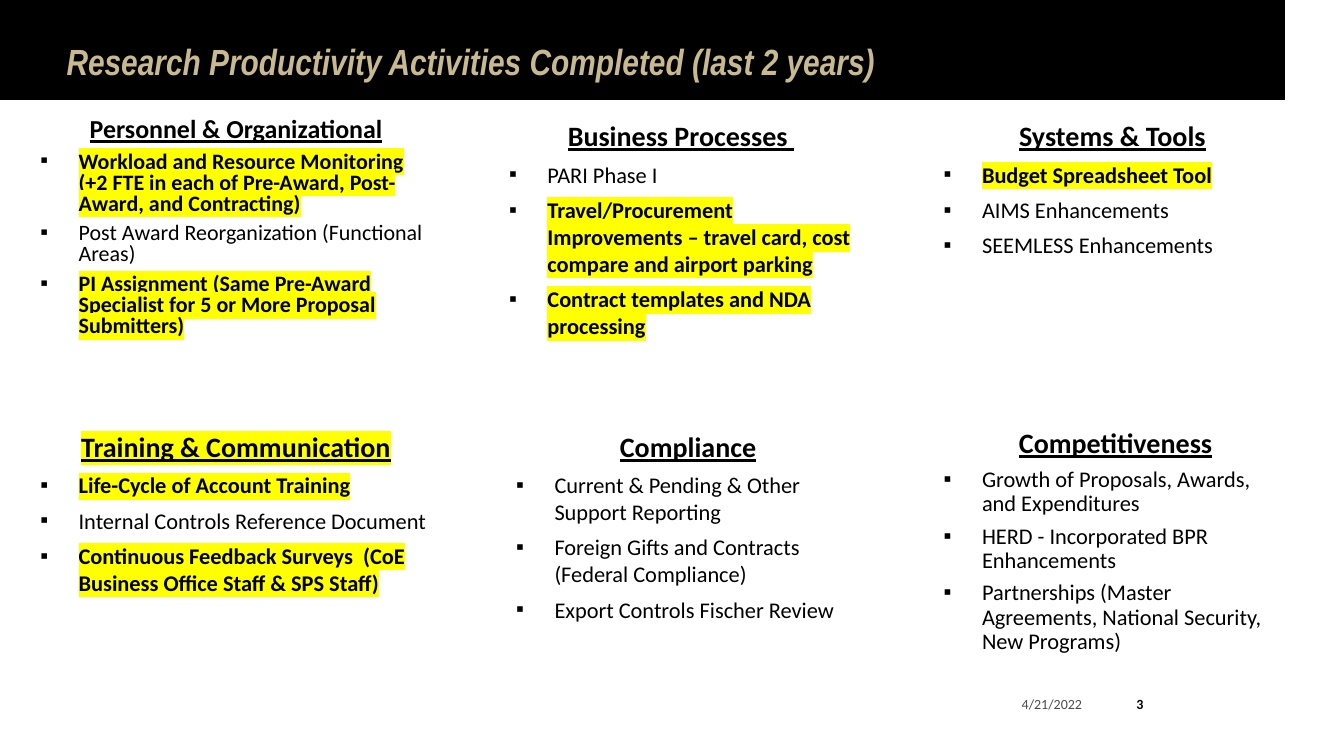
from lxml import etree
from pptx import Presentation
from pptx.dml.color import RGBColor as RGB
from pptx.enum.shapes import MSO_SHAPE as SHAPE
from pptx.enum.text import MSO_ANCHOR as ANCHOR, MSO_AUTO_SIZE as FIT, PP_ALIGN as ALIGN
from pptx.oxml.ns import qn
from pptx.util import Inches, Pt

COLORS = {"bar": "000000", "panel": "FFFFFF", "title": "C9B991",
          "text": "000000", "date": "4C4C4C", "mark": "FFFF00"}

TITLE = "Research Productivity Activities Completed (last 2 years)"
TOP, BOTTOM = 1.18, 4.26

PANELS = [
    dict(box=(0.36, TOP, 3.91, 2.76), heading="Personnel & Organizational",
         sizes=(18.5, 15.7), spacing=0.8, items=[
             ("Workload and Resource Monitoring (+2 FTE in each of Pre-Award, "
              "Post-Award, and Contracting)", True),
             ("Post Award Reorganization (Functional Areas)", False),
             ("PI Assignment (Same Pre-Award Specialist for 5 or More "
              "Proposal Submitters)", True)]),
    dict(box=(5.01, TOP, 3.44, 2.57), heading="Business Processes ", items=[
        ("PARI Phase I", False),
        ("Travel/Procurement Improvements – travel card, cost compare and "
         "airport parking", True),
        ("Contract templates and NDA processing", True)]),
    dict(box=(9.32, TOP, 3.44, 2.57), heading="Systems & Tools", tail=" ", items=[
        ("Budget Spreadsheet Tool", True),
        ("AIMS Enhancements", False),
        ("SEEMLESS Enhancements", False)]),
    dict(box=(0.36, BOTTOM, 3.91, 2.49), heading="Training & Communication",
         marked=True, items=[
             ("Life-Cycle of Account Training", True),
             ("Internal Controls Reference Document", False),
             ("Continuous Feedback Surveys  (CoE Business Office Staff & "
              "SPS Staff)", True)]),
    dict(box=(5.08, BOTTOM, 3.44, 2.86), heading="Compliance", items=[
        ("Current & Pending & Other Support Reporting", False),
        ("Foreign Gifts and Contracts (Federal Compliance)", False),
        ("Export Controls Fischer Review", False)]),
    dict(box=(9.32, BOTTOM, 3.44, 2.49), heading="Competitiveness",
         spacing=0.9, items=[
             ("Growth of Proposals, Awards, and Expenditures", False),
             ("HERD - Incorporated BPR Enhancements", False),
             ("Partnerships (Master Agreements, National Security, "
              "New Programs)", False)]),
]


def inches(box):
    """Return the box as lengths."""
    return [Inches(v) for v in box]


def add_block(s, kind, box, fill=None, line=None):
    """Add a flat shape with an optional fill and line."""
    sp = s.shapes.add_shape(kind, *inches(box))
    sp.shadow.inherit = False
    if fill:
        sp.fill.solid()
        sp.fill.fore_color.rgb = RGB.from_string(COLORS[fill])
    else:
        sp.fill.background()
    if line:
        sp.line.color.rgb = RGB.from_string(COLORS[line])
        sp.line.width = Pt(1)
    else:
        sp.line.fill.background()
    return sp


def add_run(p, text, size, color="text", font="Calibri", bold=False,
            italic=False, underline=False, marked=False):
    """Add a formatted run, highlighted if marked."""
    r = p.add_run()
    r.text = text
    f = r.font
    f.size, f.name = Pt(size), font
    f.bold, f.italic, f.underline = bold, italic, underline
    f.color.rgb = RGB.from_string(COLORS[color])
    if marked:
        mark = etree.Element(qn("a:highlight"))
        etree.SubElement(mark, qn("a:srgbClr"), val=COLORS["mark"])
        r._r.get_or_add_rPr().find(qn("a:solidFill")).addnext(mark)


def set_frame(tf, margins=(0, 0), anchor=ANCHOR.TOP):
    """Set margins, wrapping and anchor of a text frame."""
    tf.margin_left = tf.margin_right = Inches(margins[0])
    tf.margin_top = tf.margin_bottom = Inches(margins[1])
    tf.word_wrap, tf.auto_size, tf.vertical_anchor = True, FIT.NONE, anchor


def set_indent(p, left, first=0, bullet=None):
    """Set the indents and the bullet of a paragraph."""
    pPr = p._p.get_or_add_pPr()
    pPr.set("marL", str(Inches(left)))
    pPr.set("indent", str(Inches(first)))
    if bullet:
        etree.SubElement(pPr, qn("a:buFont"), typeface="Arial")
        etree.SubElement(pPr, qn("a:buChar"), char=bullet)


def add_header(s, box):
    """Draw the black bar and place the title in it."""
    bar = add_block(s, SHAPE.RECTANGLE, box, fill="bar", line="bar")
    s.shapes._spTree.insert(2, bar._element)

    left, top = box[:2]
    title = s.shapes.title
    title.left, title.top, title.width, title.height = inches(
        (left + 0.66, top + 0.44, 10.44, 0.39))
    set_frame(title.text_frame)
    p = title.text_frame.paragraphs[0]
    p.alignment, p.line_spacing = ALIGN.LEFT, 0.9
    add_run(p, TITLE, 26, color="title", font="Arial Narrow", bold=True, italic=True)


def add_panel(s, box, heading, items, sizes=(20, 16), spacing=1.0,
              marked=False, tail=""):
    """Place a heading and its bulleted list in the box."""
    tf = add_block(s, SHAPE.RECTANGLE, box, fill="panel").text_frame
    set_frame(tf)
    p = tf.paragraphs[0]
    p.alignment = ALIGN.CENTER
    set_indent(p, 0.05)
    add_run(p, heading, sizes[0], bold=True, underline=True, marked=marked)
    if tail:
        add_run(p, tail, sizes[0], bold=True)
    for text, done in items:
        p = tf.add_paragraph()
        p.alignment = ALIGN.LEFT
        set_indent(p, 0.42, -0.38, "▪")
        add_run(p, text, sizes[1], bold=done, marked=done)
    for p in tf.paragraphs:
        p.line_spacing, p.space_after = spacing, Pt(6)


def add_footer(s, box):
    """Place the date and the slide number in the box."""
    left, top, width, height = box
    date = s.shapes.add_textbox(*inches((left, top + 0.03, 1.27, 0.35)))
    set_frame(date.text_frame, (0.1, 0.05), ANCHOR.MIDDLE)
    p = date.text_frame.paragraphs[0]
    p.alignment = ALIGN.RIGHT
    add_run(p, "4/21/2022", 10, color="date")

    number = add_block(s, SHAPE.OVAL, (left + width - 0.53, top, 0.53, height))
    set_frame(number.text_frame, (0.02, 0.05), ANCHOR.MIDDLE)
    p = number.text_frame.paragraphs[0]
    p.alignment = ALIGN.CENTER
    add_run(p, "3", 10, bold=True)


def main():
    """Build and save the slide."""
    prs = Presentation()
    prs.slide_width, prs.slide_height = Inches(13.33), Inches(7.5)
    s = prs.slides.add_slide(prs.slide_layouts[5])
    add_header(s, (0, 0, 12.74, 0.99))
    add_footer(s, (9.56, 6.78, 2.01, 0.4))
    for panel in PANELS:
        add_panel(s, **panel)
    prs.save("out.pptx")


if __name__ == "__main__":
    main()
